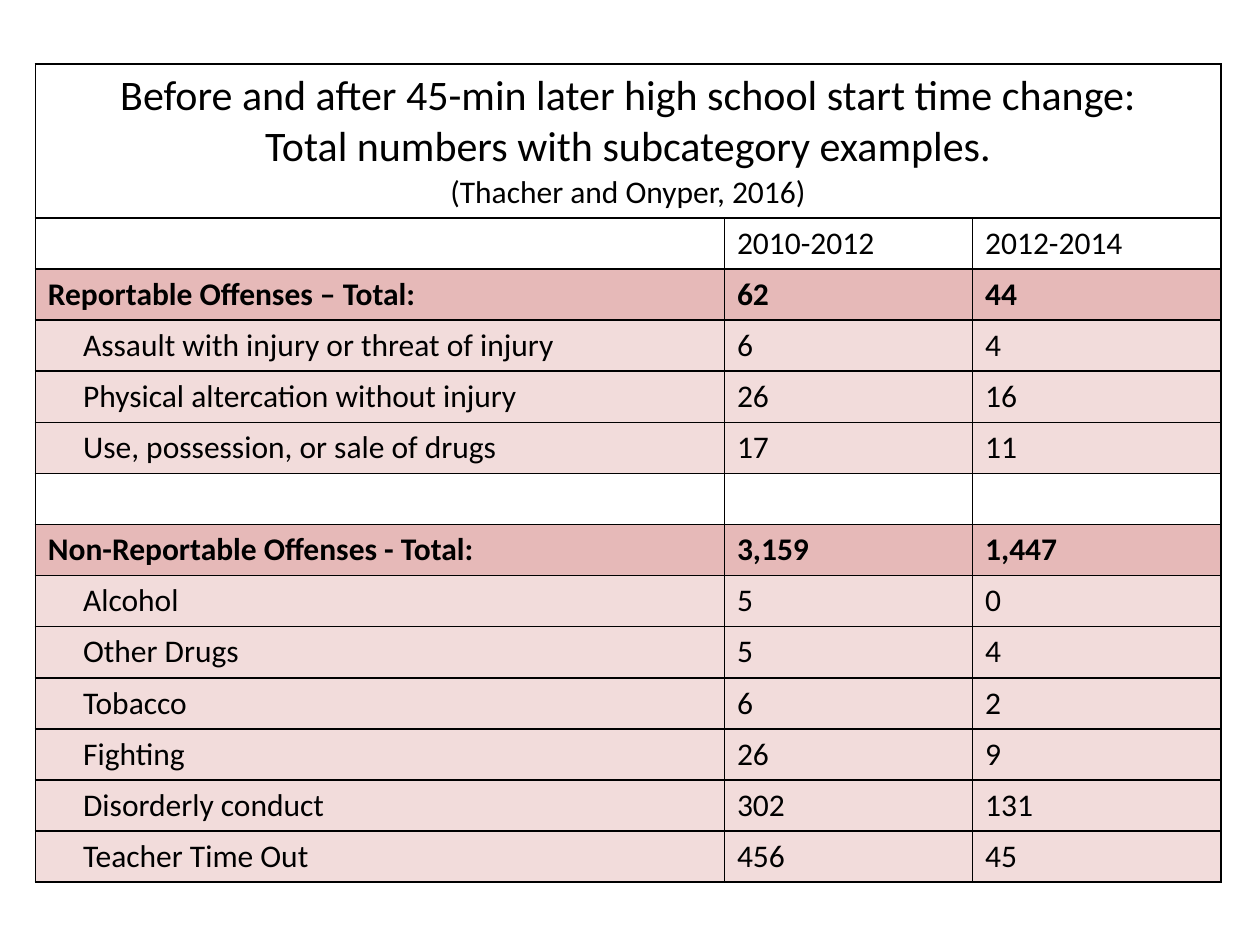
from lxml.etree import SubElement
from pptx import Presentation
from pptx.dml.color import RGBColor
from pptx.enum.text import PP_ALIGN
from pptx.oxml.ns import qn
from pptx.util import Inches, Pt

BLACK = "000000"
TOTAL_FILL = "E6B9B8"
DETAIL_FILL = "F2DCDB"
TITLE_LINES = [
    ("Before and after 45-min later high school start time change:", 24),
    ("Total numbers with subcategory examples.", 24),
    ("(Thacher and Onyper, 2016)", 18),
]
ROWS = [
    ("plain", "", "2010-2012", "2012-2014"),
    ("total", "Reportable Offenses – Total:", "62", "44"),
    ("detail", "Assault with injury or threat of injury", "6", "4"),
    ("detail", "Physical altercation without injury", "26", "16"),
    ("detail", "Use, possession, or sale of drugs", "17", "11"),
    ("plain", "", "", ""),
    ("total", "Non-Reportable Offenses - Total:", "3,159", "1,447"),
    ("detail", "Alcohol", "5", "0"),
    ("detail", "Other Drugs", "5", "4"),
    ("detail", "Tobacco", "6", "2"),
    ("detail", "Fighting", "26", "9"),
    ("detail", "Disorderly conduct", "302", "131"),
    ("detail", "Teacher Time Out", "456", "45"),
]
FILLS = {"total": TOTAL_FILL, "detail": DETAIL_FILL}


def color(value):
    return RGBColor.from_string(value)


def style_paragraph(para, size=18, bold=False):
    para.font.name = "Calibri"
    para.font.size = Pt(size)
    para.font.bold = bold
    para.font.color.rgb = color(BLACK)


def style_cell(cell, fill=None):
    properties = cell._tc.get_or_add_tcPr()
    for side in ("lnL", "lnR", "lnT", "lnB"):
        line = SubElement(properties, qn(f"a:{side}"), w=str(Pt(1)))
        solid = SubElement(line, qn("a:solidFill"))
        SubElement(solid, qn("a:srgbClr"), val=BLACK)
    if fill:
        cell.fill.solid()
        cell.fill.fore_color.rgb = color(fill)
    else:
        cell.fill.background()


def fill_title(cell):
    frame = cell.text_frame
    frame.text = "\n".join(text for text, size in TITLE_LINES)
    for para, (text, size) in zip(frame.paragraphs, TITLE_LINES):
        para.alignment = PP_ALIGN.CENTER
        style_paragraph(para, size)


def add_offense_table(page, left, top, width, height):
    table = page.shapes.add_table(
        len(ROWS) + 1, 3, left, top, width, height
    ).table
    table.first_row = False
    table.horz_banding = False
    year_width = Inches(1.97)
    table.columns[0].width = width - 2 * year_width
    table.columns[1].width = table.columns[2].width = year_width

    title_height = Inches(1.22)
    table.rows[0].height = title_height
    for row in list(table.rows)[1:]:
        row.height = (height - title_height) // len(ROWS)

    for cell in table.rows[0].cells:
        style_cell(cell)
    table.cell(0, 0).merge(table.cell(0, 2))
    fill_title(table.cell(0, 0))

    for row_index, (kind, *texts) in enumerate(ROWS, start=1):
        for column_index, text in enumerate(texts):
            cell = table.cell(row_index, column_index)
            style_cell(cell, FILLS.get(kind))
            cell.text = text
            style_paragraph(cell.text_frame.paragraphs[0], bold=kind == "total")
        if kind == "detail":
            table.cell(row_index, 0).margin_left = Inches(0.38)


def main():
    deck = Presentation()
    deck.slide_width = Inches(10)
    deck.slide_height = Inches(7.5)
    page = deck.slides.add_slide(deck.slide_layouts[6])
    add_offense_table(page, Inches(0.28), Inches(0.51), Inches(9.41), Inches(6.48))
    deck.save("out.pptx")


if __name__ == "__main__":
    main()
